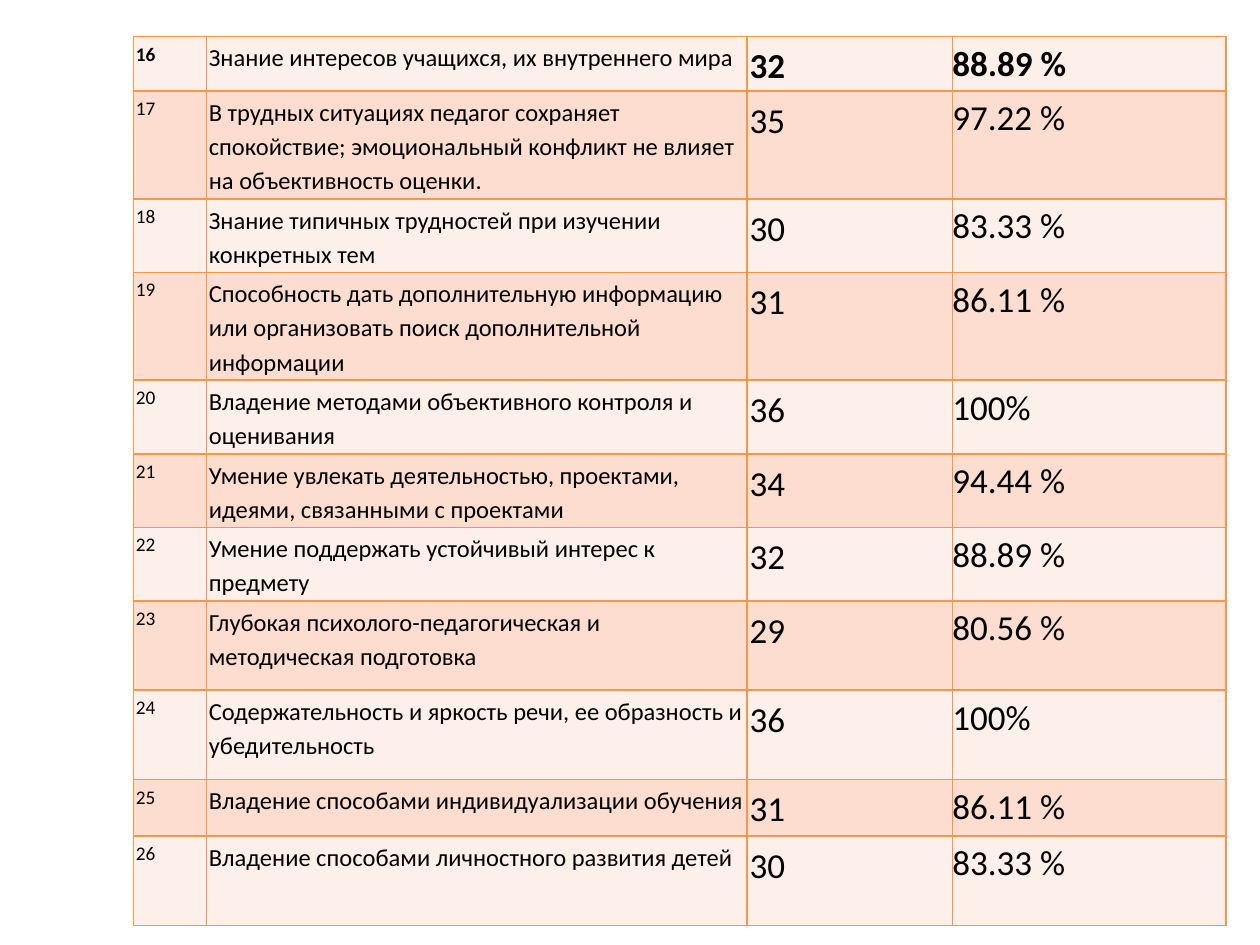
import lxml.etree
import pptx
import pptx.dml.color
import pptx.oxml.ns
import pptx.util
from pptx.util import Cm

BLACK = pptx.dml.color.RGBColor(0x00, 0x00, 0x00)
ORANGE = pptx.dml.color.RGBColor(0xF7, 0x96, 0x46)
LIGHT_BAND = pptx.dml.color.RGBColor(0xFD, 0xEF, 0xE9)
DARK_BAND = pptx.dml.color.RGBColor(0xFC, 0xDD, 0xCF)

FIRST_NUMBER = 16
COLUMN_WIDTHS = [1.47, 10.9, 4.14, 5.51]
FONT_SIZES = [11, 14, 20, 20]
INSETS = [0.05, 0.05, 0.05, 0]

# Row height in cm, criterion, number of votes, share
CRITERIA = [
    (1.04, "Знание интересов учащихся, их внутреннего мира", "32", "88.89 %"),
    (2.08, "В трудных ситуациях педагог сохраняет спокойствие; эмоциональный "
           "конфликт не влияет на объективность оценки.", "35", "97.22 %"),
    (1.42, "Знание типичных трудностей при изучении конкретных тем", "30", "83.33 %"),
    (2.08, "Способность дать дополнительную информацию или организовать поиск "
           "дополнительной информации", "31", "86.11 %"),
    (1.42, "Владение методами объективного контроля и оценивания", "36", "100%"),
    (1.42, "Умение увлекать деятельностью, проектами, идеями, связанными "
           "с проектами", "34", "94.44 %"),
    (1.42, "Умение поддержать устойчивый интерес к предмету", "32", "88.89 %"),
    (1.8, "Глубокая психолого-педагогическая и методическая подготовка", "29", "80.56 %"),
    (1.8, "Содержательность и яркость речи, ее образность и убедительность", "36", "100%"),
    (1.14, "Владение способами индивидуализации обучения", "31", "86.11 %"),
    (1.8, "Владение способами личностного развития детей", "30", "83.33 %"),
]


def add_borders(cell, color, width):
    properties = cell._tc.get_or_add_tcPr()
    for side in ("a:lnL", "a:lnR", "a:lnT", "a:lnB"):
        line = lxml.etree.SubElement(properties, pptx.oxml.ns.qn(side), w=str(int(width)))
        fill = lxml.etree.SubElement(line, pptx.oxml.ns.qn("a:solidFill"))
        lxml.etree.SubElement(fill, pptx.oxml.ns.qn("a:srgbClr"), val=str(color))


deck = pptx.Presentation()
deck.slide_width = Cm(25.4)
deck.slide_height = Cm(19.05)
page = deck.slides.add_slide(deck.slide_layouts[6])

table = page.shapes.add_table(
    len(CRITERIA), len(COLUMN_WIDTHS), Cm(2.69), Cm(0.74),
    Cm(sum(COLUMN_WIDTHS)), Cm(sum(row[0] for row in CRITERIA))).table
table.first_row = False
table.horz_banding = False
for column, width in zip(table.columns, COLUMN_WIDTHS):
    column.width = Cm(width)

for row_index, (height, *texts) in enumerate(CRITERIA):
    table.rows[row_index].height = Cm(height)
    texts.insert(0, str(FIRST_NUMBER + row_index))
    for column_index, text in enumerate(texts):
        cell = table.cell(row_index, column_index)
        inset = Cm(INSETS[column_index])
        cell.margin_left = cell.margin_right = inset
        cell.margin_top = cell.margin_bottom = inset
        add_borders(cell, ORANGE, pptx.util.Pt(1))
        cell.fill.solid()
        cell.fill.fore_color.rgb = DARK_BAND if row_index % 2 else LIGHT_BAND
        cell.text = text
        para = cell.text_frame.paragraphs[0]
        para.line_spacing = 1.15
        para.space_after = pptx.util.Pt(10)
        para.font.name = "Calibri"
        para.font.size = pptx.util.Pt(FONT_SIZES[column_index])
        para.font.bold = row_index == 0 and column_index != 1
        para.font.color.rgb = BLACK

deck.save("out.pptx")
